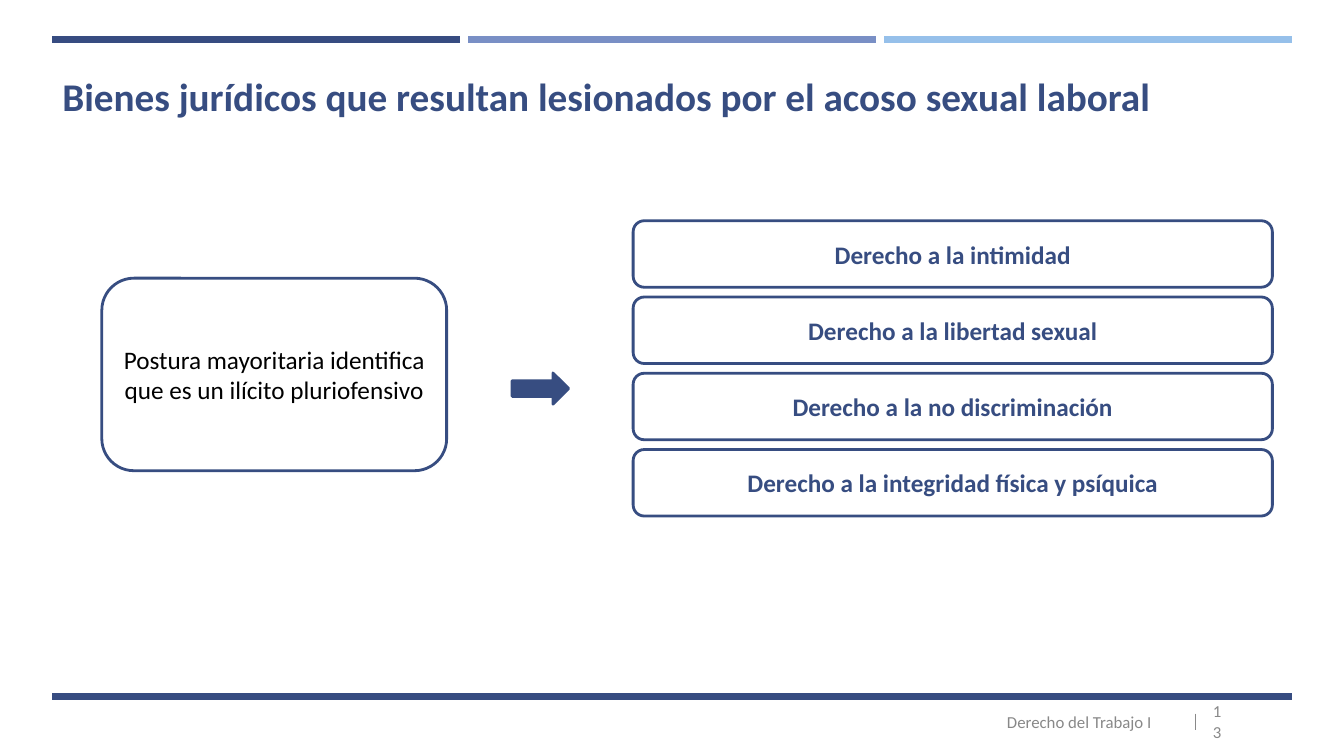
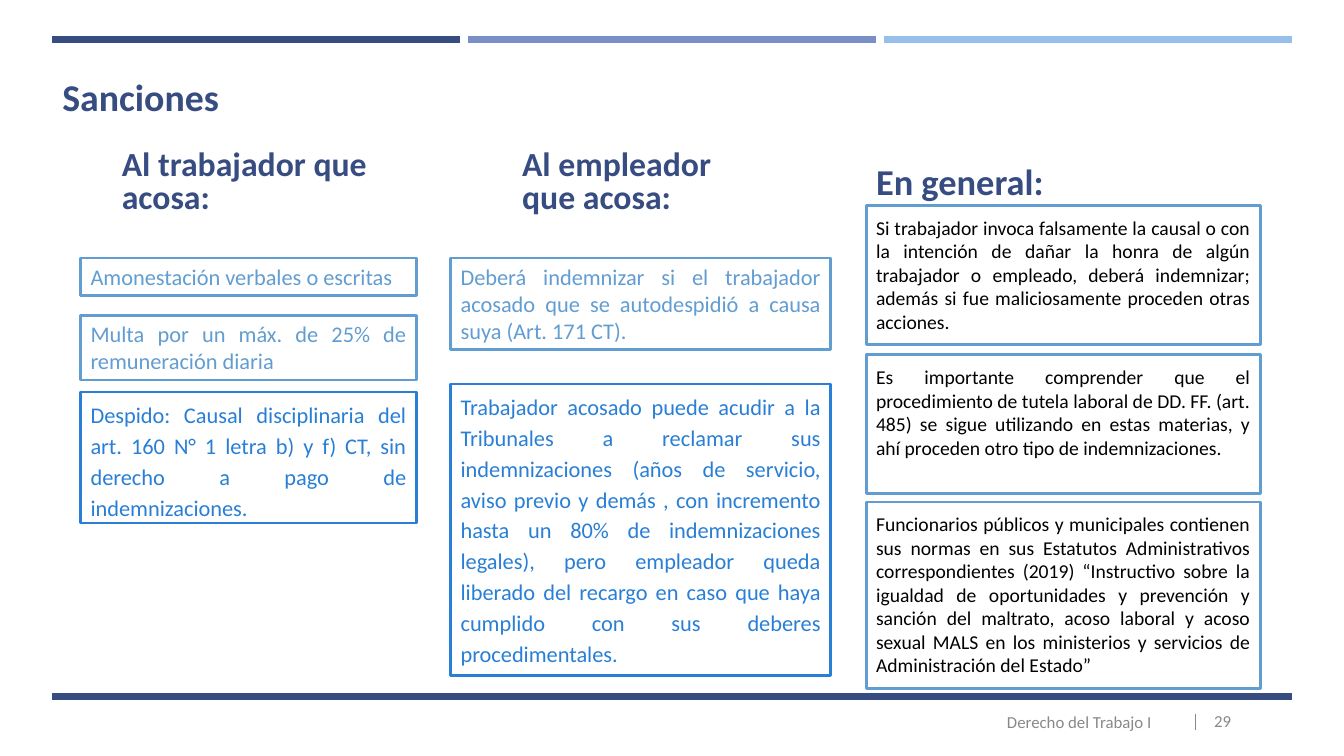
from pptx import Presentation
from pptx.dml.color import RGBColor
from pptx.enum.shapes import MSO_CONNECTOR, MSO_SHAPE
from pptx.enum.text import MSO_ANCHOR, PP_ALIGN
from pptx.oxml.ns import qn
from pptx.util import Inches, Pt
from lxml.etree import SubElement

NAVY, RULE_NAVY, VIOLET, PALE = "374D81", "374C81", "798FC5", "96C0EA"
SKY, BLUE, GRAY, RULE_GRAY, BLACK = "629DD1", "297FD5", "888888", "898989", "000000"


def rgb(value):
    """Turn a hex string into a colour."""
    return RGBColor.from_string(value)


def assign(target, values):
    """Set each attribute named in a dict."""
    for name, value in values.items():
        setattr(target, name, value)


class Deck:
    """Shared style and the slide being built."""

    font = "Calibri"
    course = "Derecho del Trabajo I"

    def __init__(self):
        """Open an empty widescreen presentation."""
        self.prs = Presentation()
        assign(self.prs, {"slide_width": Inches(13.33), "slide_height": Inches(7.5)})

    def new_slide(self, title, number, size, number_width):
        """Add a slide with its bands, title and footer."""
        self.s = self.prs.slides.add_slide(self.prs.slide_layouts[6])
        for i, color in enumerate((RULE_NAVY, VIOLET, PALE)):
            left = 0.52 + i * 4.125
            self.line(left, 0.39, left + 4.04, 0.39, color)
        self.line(0.52, 6.91, 12.81, 6.91, RULE_NAVY)
        self.line(11.86, 7.08, 11.86, 7.24, RULE_GRAY, 1)
        self.heading(title, (0.52, 0.59, 12.28, 0.78), size)
        self.label(number, (11.93, 6.96, number_width, 0.39), size=12, color=GRAY,
                   align=PP_ALIGN.RIGHT)
        self.label(self.course, (9.47, 6.99, 2.47, 0.34), size=12, color=GRAY,
                   align=PP_ALIGN.CENTER)

    def line(self, x1, y1, x2, y2, color, width=5.25):
        """Draw a straight line without shadow."""
        sp = self.s.shapes.add_connector(MSO_CONNECTOR.STRAIGHT, *map(Inches, (x1, y1, x2, y2)))
        sp.line.color.rgb = rgb(color)
        sp.line.width = Pt(width)
        SubElement(sp._element.spPr, qn("a:effectLst"))

    def set_text(self, sp, words, size, color, bold=False, align=PP_ALIGN.LEFT,
                 spacing=1.0, anchor=MSO_ANCHOR.MIDDLE, inset=0.05):
        """Put one styled paragraph in a shape."""
        tf = sp.text_frame
        assign(tf, {"word_wrap": True, "vertical_anchor": anchor,
                    "margin_left": Inches(0.1), "margin_right": Inches(0.1),
                    "margin_top": Inches(inset), "margin_bottom": Inches(inset)})
        p = tf.paragraphs[0]
        assign(p, {"alignment": align, "line_spacing": spacing})
        r = p.add_run()
        r.text = words
        assign(r.font, {"name": self.font, "size": Pt(size), "bold": bold})
        r.font.color.rgb = rgb(color)

    def label(self, words, box, **style):
        """Add a text box."""
        self.set_text(self.s.shapes.add_textbox(*map(Inches, box)), words, **style)

    def heading(self, words, box, size, spacing=0.9):
        """Add a bold navy heading."""
        self.label(words, box, size=size, color=NAVY, bold=True, spacing=spacing)

    def shape(self, kind, box, line, fill=None):
        """Add an outlined preset shape, filled on request."""
        sp = self.s.shapes.add_shape(kind, *map(Inches, box))
        sp.shadow.inherit = False
        sp.line.color.rgb = rgb(line)
        sp.line.width = Pt(2)
        if fill:
            sp.fill.solid()
            sp.fill.fore_color.rgb = rgb(fill)
        else:
            sp.fill.background()
        return sp

    def card(self, words, box, color, bold=False):
        """Add a rounded box with centred text."""
        sp = self.shape(MSO_SHAPE.ROUNDED_RECTANGLE, box, NAVY)
        self.set_text(sp, words, 18, color, bold, PP_ALIGN.CENTER)

    def note(self, words, box, line, color, size=16, spacing=1.0, inset=0.05):
        """Add a rectangle with justified text."""
        sp = self.shape(MSO_SHAPE.RECTANGLE, box, line)
        self.set_text(sp, words, size, color, align=PP_ALIGN.JUSTIFY, spacing=spacing,
                      anchor=MSO_ANCHOR.TOP, inset=inset)


def build_rights(deck):
    """Build the slide on the rights harmed."""
    deck.new_slide("Bienes jurídicos que resultan lesionados por el acoso sexual laboral",
                   "13", 28, 0.28)
    deck.card("Postura mayoritaria identifica que es un ilícito pluriofensivo",
              (1.01, 2.76, 3.42, 1.91), BLACK)
    deck.shape(MSO_SHAPE.RIGHT_ARROW, (5.08, 3.7, 0.56, 0.31), NAVY, NAVY)
    rights = ("intimidad", "libertad sexual", "no discriminación",
              "integridad física y psíquica")
    for i, right in enumerate(rights):
        deck.card(f"Derecho a la {right}", (6.28, 2.19 + i * 2.27 / 3, 6.34, 0.66), NAVY, True)


def build_sanctions(deck):
    """Build the slide on sanctions, in three columns."""
    deck.new_slide("Sanciones", "29", 27, 0.38)
    deck.heading("Al trabajador que acosa:", (1.11, 1.43, 2.71, 0.78), 24.1, 0.8)
    deck.heading("Al empleador que acosa:", (5.08, 1.43, 2.47, 0.78), 24.1, 0.8)
    deck.heading("En general:", (8.59, 1.48, 2.35, 0.69), 26)

    worker, employer, general = (0.8, 3.33), (4.47, 3.77), (8.59, 3.91)
    light = {"line": SKY, "color": SKY}
    strong = {"line": BLUE, "color": BLUE, "spacing": 1.15}
    plain = {"line": SKY, "color": BLACK, "size": 14, "inset": 0.1}
    notes = (
        (worker, 2.56, 0.37, light, "Amonestación verbales o escritas"),
        (worker, 3.13, 0.64, light, "Multa por un máx. de 25% de remuneración diaria"),
        (worker, 3.89, 1.3, strong,
         "Despido: Causal disciplinaria del art. 160 N° 1 letra b) y f) CT, sin derecho a "
         "pago de indemnizaciones."),
        (employer, 2.56, 0.91, light,
         "Deberá indemnizar si el trabajador acosado que se autodespidió a causa suya "
         "(Art. 171 CT)."),
        (employer, 3.81, 2.89, strong,
         "Trabajador acosado puede acudir a la Tribunales a reclamar sus indemnizaciones "
         "(años de servicio, aviso previo y demás , con incremento hasta un 80% de "
         "indemnizaciones legales), pero empleador queda liberado del recargo en caso que "
         "haya cumplido con sus deberes procedimentales."),
        (general, 2.04, 1.38, plain,
         "Si trabajador invoca falsamente la causal o con la intención de dañar la honra de "
         "algún trabajador o empleado, deberá indemnizar; además si fue maliciosamente "
         "proceden otras acciones."),
        (general, 3.52, 1.38, plain,
         "Es importante comprender que el procedimiento de tutela laboral de DD. FF. "
         "(art. 485) se sigue utilizando en estas materias, y ahí proceden otro tipo de "
         "indemnizaciones."),
        (general, 4.98, 1.85, plain,
         "Funcionarios públicos y municipales contienen sus normas en sus Estatutos "
         "Administrativos correspondientes (2019) “Instructivo sobre la igualdad de "
         "oportunidades y prevención y sanción del maltrato, acoso laboral y acoso sexual "
         "MALS en los ministerios y servicios de Administración del Estado”"),
    )
    for (left, width), top, height, style, words in notes:
        deck.note(words, (left, top, width, height), **style)


deck = Deck()
build_rights(deck)
build_sanctions(deck)
deck.prs.save("out.pptx")
